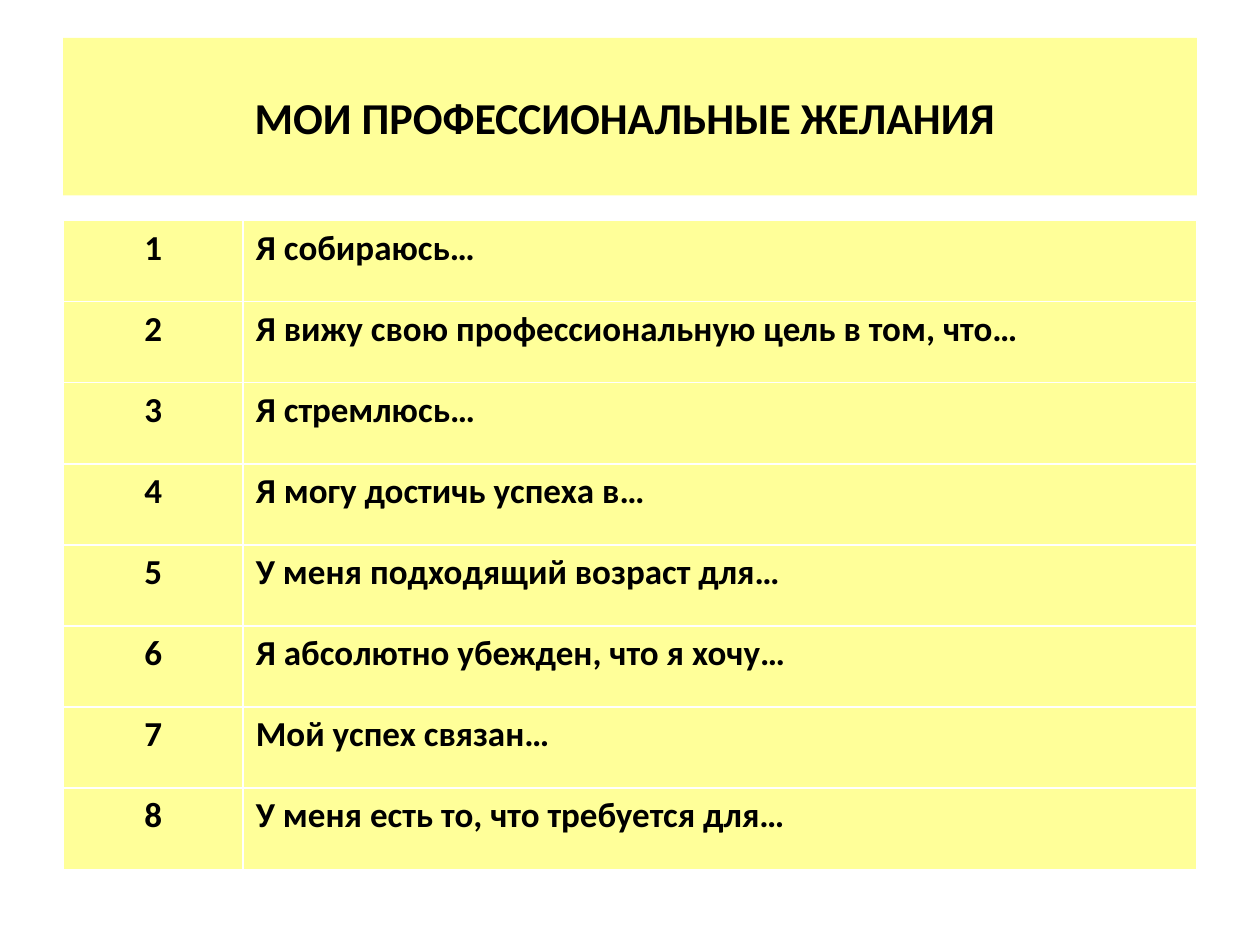
from pptx import Presentation
from pptx.dml.color import RGBColor
from pptx.enum.text import MSO_ANCHOR, PP_ALIGN
from pptx.util import Pt

HUES = {"fill": "FFFF99", "text": "000000"}
WISHES = [
    "Я собираюсь…",
    "Я вижу свою профессиональную цель в том, что…",
    "Я стремлюсь…",
    "Я могу достичь успеха в…",
    "У меня подходящий возраст для…",
    "Я абсолютно убежден, что я хочу…",
    "Мой успех связан…",
    "У меня есть то, что требуется для…",
]


class Deck:
    def __init__(self, wide, high):
        self.prs = Presentation()
        self.prs.slide_width, self.prs.slide_height = Pt(wide), Pt(high)
        self.slide = self.prs.slides.add_slide(self.prs.slide_layouts[5])
        self.font = {"name": "Calibri", "bold": True}

    def paint(self, item):
        item.fill.solid()
        item.fill.fore_color.rgb = RGBColor.from_string(HUES["fill"])

    def label(self, frame, text, size, align):
        para = frame.paragraphs[0]
        para.alignment = align
        run = para.add_run()
        run.text = text
        for key, value in {**self.font, "size": Pt(size)}.items():
            setattr(run.font, key, value)
        run.font.color.rgb = RGBColor.from_string(HUES["text"])

    def title(self, text, left, top, width, height):
        box = self.slide.shapes.title
        place = {"left": left, "top": top, "width": width, "height": height}
        for key, value in place.items():
            setattr(box, key, Pt(value))
        self.paint(box)
        box.text_frame.vertical_anchor = MSO_ANCHOR.MIDDLE
        self.label(box.text_frame, text, 25.2, PP_ALIGN.CENTER)

    def table(self, rows, left, top, widths, height):
        grid = self.slide.shapes.add_table(
            len(rows), len(widths), Pt(left), Pt(top),
            Pt(sum(widths)), Pt(height)).table
        for col, width in zip(grid.columns, widths):
            col.width = Pt(width)
        aligns = (PP_ALIGN.CENTER, PP_ALIGN.JUSTIFY)
        for r, row in enumerate(rows):
            grid.rows[r].height = Pt(height / len(rows))
            for c, text in enumerate(row):
                cell = grid.cell(r, c)
                self.paint(cell)
                self.label(cell.text_frame, text, 20, aligns[c])


def main():
    deck = Deck(720, 540)

    # Title band
    deck.title("МОИ ПРОФЕССИОНАЛЬНЫЕ ЖЕЛАНИЯ ", 36, 21.6, 648, 90)

    # Numbered wishes; the table style draws the white rules
    rows = [(str(n), wish) for n, wish in enumerate(WISHES, 1)]
    deck.table(rows, 36, 126, (103, 545), 370.8)

    deck.prs.save("out.pptx")


if __name__ == "__main__":
    main()
